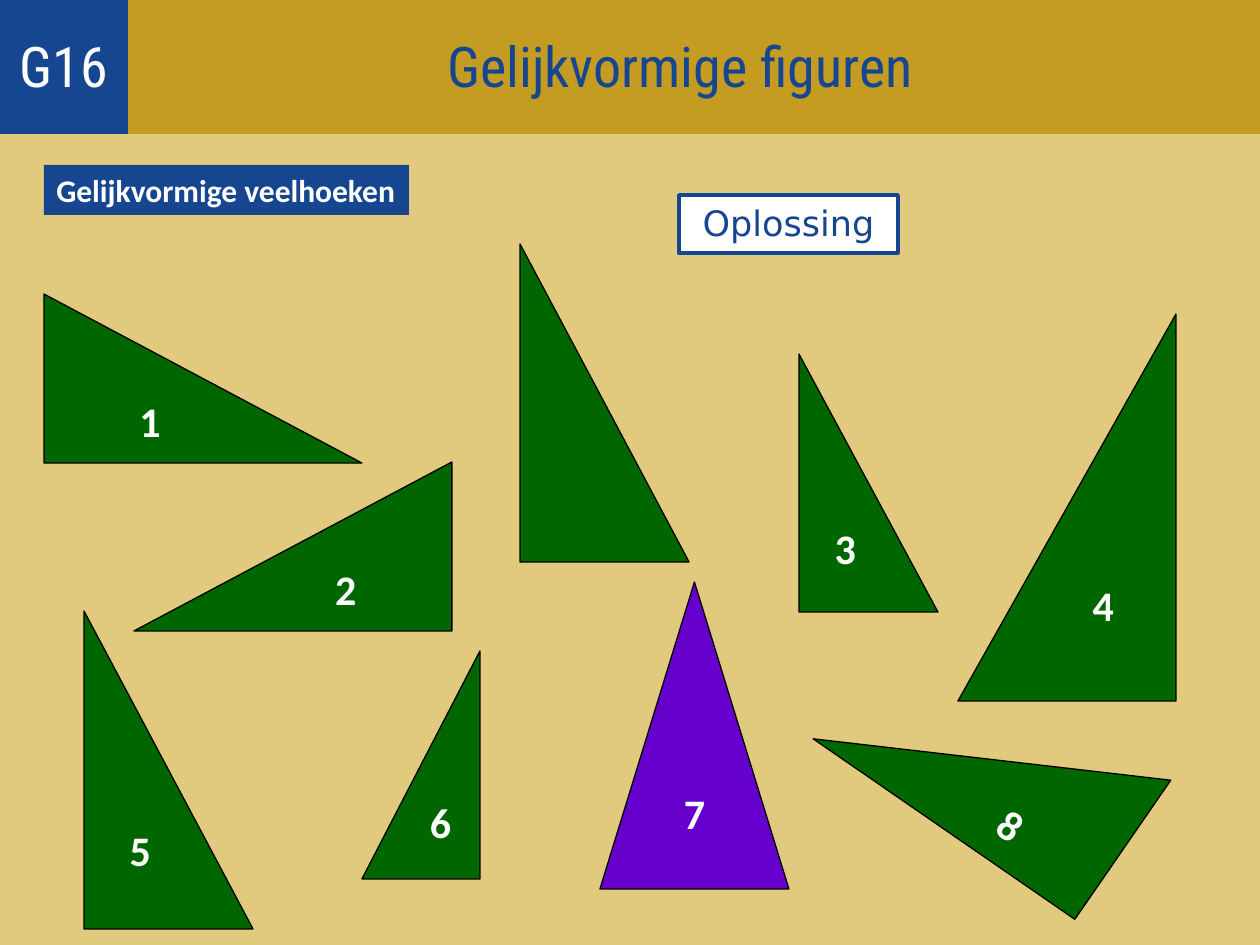
from dataclasses import dataclass
from typing import Optional

from pptx import Presentation
from pptx import util as u
from pptx.dml.color import RGBColor
from pptx.enum import shapes, text

PX_PER_INCH = 126
GREEN = RGBColor(0x00, 0x66, 0x00)
PURPLE = RGBColor(0x66, 0x00, 0xCC)
BLUE = RGBColor(0x17, 0x46, 0x91)
GOLD = RGBColor(0xC5, 0x9C, 0x22)
SAND = RGBColor(0xE1, 0xCA, 0x7D)
WHITE = RGBColor(0xFF, 0xFF, 0xFF)
OFF_WHITE = RGBColor(0xFC, 0xFD, 0xFE)
BLACK = RGBColor(0x00, 0x00, 0x00)

RIGHT_TRIANGLE = shapes.MSO_SHAPE.RIGHT_TRIANGLE
ISOSCELES = shapes.MSO_SHAPE.ISOSCELES_TRIANGLE
RECTANGLE = shapes.MSO_SHAPE.RECTANGLE
CENTER, LEFT = text.PP_ALIGN.CENTER, text.PP_ALIGN.LEFT
MIDDLE, TOP = text.MSO_ANCHOR.MIDDLE, text.MSO_ANCHOR.TOP


@dataclass(frozen=True)
class Box:
    left: int
    top: int
    width: int
    height: int


@dataclass(frozen=True)
class TextStyle:
    font: str
    size: int
    color: RGBColor
    bold: bool = False
    align: text.PP_ALIGN = CENTER
    anchor: text.MSO_ANCHOR = MIDDLE
    wrap: bool = True


@dataclass(frozen=True)
class Triangle:
    label: str
    box: Box
    mirrored: bool = False
    rotation: float = 0
    kind: shapes.MSO_SHAPE = RIGHT_TRIANGLE
    color: RGBColor = GREEN


NUMBER = TextStyle("Calibri", 24, WHITE, bold=True, wrap=False)
LABEL = TextStyle("Calibri", 18, WHITE, bold=True, align=LEFT, anchor=TOP, wrap=False)
TITLE = TextStyle("Roboto Condensed", 32, BLUE)
CODE = TextStyle("Roboto Condensed", 32, OFF_WHITE)
BUTTON = TextStyle("DejaVu Sans", 20, BLUE, anchor=TOP)

TRIANGLES = [
    Triangle("2", Box(134, 462, 318, 169), mirrored=True),
    Triangle("", Box(520, 244, 169, 318)),
    Triangle("5", Box(84, 611, 169, 318)),
    Triangle("4", Box(958, 314, 218, 387), mirrored=True),
    Triangle("3", Box(799, 354, 139, 258)),
    Triangle("1", Box(44, 294, 318, 169)),
    Triangle("7", Box(600, 582, 189, 307), kind=ISOSCELES, color=PURPLE),
    Triangle("6", Box(362, 651, 118, 228), mirrored=True),
    Triangle("8", Box(833, 675, 318, 169), mirrored=True, rotation=34.6),
]


def px(length: int) -> int:
    return u.Inches(length / PX_PER_INCH)


def place(shape, box: Box) -> None:
    shape.left, shape.top = px(box.left), px(box.top)
    shape.width, shape.height = px(box.width), px(box.height)


def paint(shape, fill: RGBColor, line: Optional[RGBColor] = None, weight: float = 0) -> None:
    shape.fill.solid()
    shape.fill.fore_color.rgb = fill
    if line is None:
        shape.line.fill.background()
    else:
        shape.line.color.rgb = line
        shape.line.width = u.Pt(weight)


def write(shape, words: str, style: TextStyle) -> None:
    frame = shape.text_frame
    frame.text = words
    frame.auto_size = text.MSO_AUTO_SIZE.NONE
    frame.word_wrap = style.wrap
    frame.vertical_anchor = style.anchor
    paragraph = frame.paragraphs[0]
    paragraph.alignment = style.align
    paragraph.font.name = style.font
    paragraph.font.size = u.Pt(style.size)
    paragraph.font.bold = style.bold
    paragraph.font.color.rgb = style.color


def add_shape(slide, kind: shapes.MSO_SHAPE, box: Box, fill: RGBColor,
              line: Optional[RGBColor] = None, weight: float = 0):
    shape = slide.shapes.add_shape(kind, 0, 0, 0, 0)
    place(shape, box)
    shape.shadow.inherit = False
    paint(shape, fill, line, weight)
    return shape


def add_triangle(slide, triangle: Triangle) -> None:
    shape = add_shape(slide, triangle.kind, triangle.box, triangle.color, BLACK, 0.75)
    shape.rotation = triangle.rotation
    if triangle.mirrored:
        shape.element.spPr.xfrm.set("flipH", "1")
    if triangle.label:
        write(shape, triangle.label, NUMBER)


def main() -> None:
    presentation = Presentation()
    presentation.slide_width, presentation.slide_height = u.Inches(10), u.Inches(7.5)
    slide = presentation.slides.add_slide(presentation.slide_layouts[5])
    slide.background.fill.solid()
    slide.background.fill.fore_color.rgb = SAND

    # Title bar, with its text centred slightly right of the middle
    title = slide.shapes.title
    place(title, Box(0, -4, 1260, 138))
    paint(title, GOLD)
    write(title, "Gelijkvormige figuren", TITLE)
    title.text_frame.margin_left = px(113)

    # Lesson code on the title bar
    code = add_shape(slide, RECTANGLE, Box(0, -4, 128, 138), BLUE)
    write(code, "G16", CODE)

    # Numbered triangles
    for triangle in TRIANGLES:
        add_triangle(slide, triangle)

    # Section label and solution button
    label = add_shape(slide, RECTANGLE, Box(44, 165, 365, 50), BLUE)
    write(label, "Gelijkvormige veelhoeken", LABEL)
    button = add_shape(slide, RECTANGLE, Box(679, 195, 219, 58), WHITE, BLUE, 2)
    write(button, "Oplossing", BUTTON)

    presentation.save("out.pptx")


if __name__ == "__main__":
    main()
